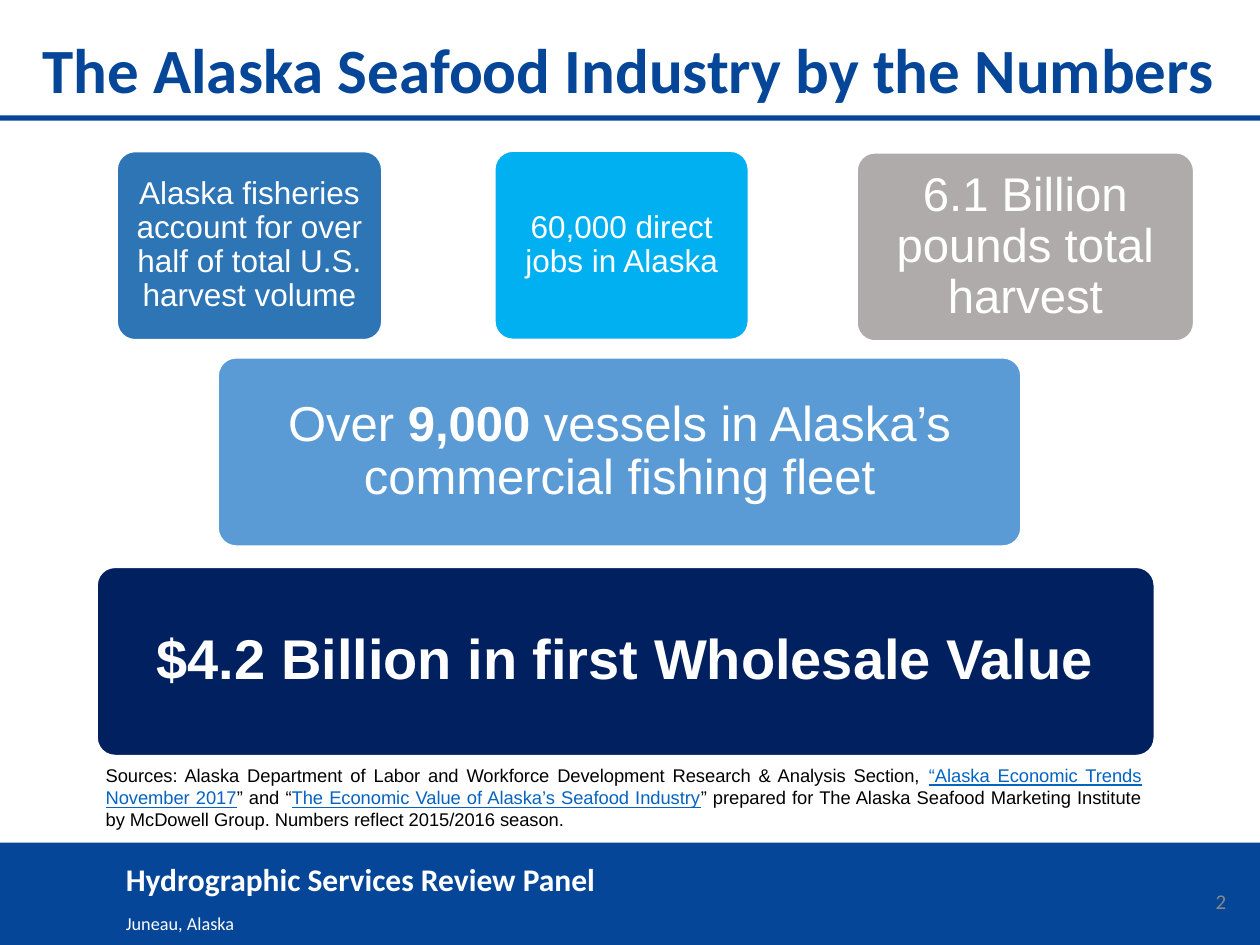
import pptx
import pptx.util
import pptx.dml.color
import pptx.enum.shapes
import pptx.enum.text
from lxml import etree

Pt = pptx.util.Pt
ALIGN = pptx.enum.text.PP_ALIGN
ANCHOR = pptx.enum.text.MSO_ANCHOR
SHAPE = pptx.enum.shapes.MSO_SHAPE
A = "{http://schemas.openxmlformats.org/drawingml/2006/main}"

NAVY, WHITE, BLACK, LINK = "054698", "FFFFFF", "000000", "0563C1"


def rgb(value):
    return pptx.dml.color.RGBColor.from_string(value)


class Deck:
    """Holds the style and the current slide."""

    def __init__(self, width, height):
        self.prs = pptx.Presentation()
        self.prs.slide_width, self.prs.slide_height = Pt(width), Pt(height)
        self.s = None

    def slide(self):
        self.s = self.prs.slides.add_slide(self.prs.slide_layouts[6])

    def shape(self, kind, at, fill, line=None, alpha=None):
        sp = self.s.shapes.add_shape(kind, *[Pt(v) for v in at])
        sp.shadow.inherit = False
        sp.fill.solid()
        sp.fill.fore_color.rgb = rgb(fill)
        if alpha is not None:
            clr = sp.fill._xPr.find(f"{A}solidFill/{A}srgbClr")
            etree.SubElement(clr, A + "alpha").set("val", str(alpha * 1000))
        if line:
            sp.line.color.rgb, sp.line.width = rgb(line), Pt(2)
        else:
            sp.line.fill.background()
        return sp

    def frame(self, sp, anchor, ins=(7.2, 3.6)):
        tf = sp.text_frame
        x, y = Pt(ins[0]), Pt(ins[1])
        style = dict(word_wrap=True, vertical_anchor=anchor, margin_left=x,
                     margin_right=x, margin_top=y, margin_bottom=y)
        for name, value in style.items():
            setattr(tf, name, value)
        return tf

    def paragraph(self, p, runs, font, **layout):
        """Each run is (text, changes to the paragraph's font)."""
        for name, value in layout.items():
            setattr(p, name, value)
        for text, change in runs:
            r = p.add_run()
            r.text = text
            for name, value in {**font, **change}.items():
                if name == "color":
                    r.font.color.rgb = rgb(value)
                elif name == "baseline":
                    r._r.get_or_add_rPr().set("baseline", str(value * 1000))
                else:
                    setattr(r.font, name, value)

    def text(self, at, runs, font, anchor=ANCHOR.TOP, **layout):
        sp = self.s.shapes.add_textbox(*[Pt(v) for v in at])
        tf = self.frame(sp, anchor)
        self.paragraph(tf.paragraphs[0], runs, font, **layout)
        return tf

    def card(self, left, top, width, fill, size, inset, runs):
        sp = self.shape(SHAPE.ROUNDED_RECTANGLE, (left, top, width, 108.72), fill, WHITE)
        sp.adjustments[0] = 0.1
        tf = self.frame(sp, ANCHOR.MIDDLE, (inset, inset))
        font = dict(name="Arial", size=Pt(size), color=WHITE, bold=False)
        self.paragraph(tf.paragraphs[0], runs, font,
                       alignment=ALIGN.CENTER, line_spacing=0.9)


def main():
    deck = Deck(720, 540)
    deck.slide()

    # Header and footer bands
    deck.shape(SHAPE.RECTANGLE, (0, 481.5, 720, 58.5), NAVY)
    deck.shape(SHAPE.RECTANGLE, (-0.7, 0, 722, 65.5), WHITE, alpha=71)
    deck.shape(SHAPE.RECTANGLE, (0, 66, 721.4, 3), NAVY)

    # Footer text and page number
    footer = dict(name="Calibri", size=Pt(18), color=WHITE)
    tf = deck.text((64.8, 492.5, 331, 42),
                   [("Hydrographic Services Review Panel", dict(bold=True))],
                   footer, line_spacing=0.78)
    deck.paragraph(tf.add_paragraph(), [("Juneau, Alaska", dict(baseline=30))],
                   footer, space_before=Pt(6))
    deck.text((545.8, 500.4, 162, 28.8), [("2", {})],
              dict(name="Calibri", size=Pt(12), color="888888"),
              ANCHOR.MIDDLE, alignment=ALIGN.RIGHT)

    # Title
    deck.text((17.3, 18, 702.7, 48),
              [("The Alaska Seafood Industry by the Numbers", {})],
              dict(name="Calibri", size=Pt(36), color=NAVY, bold=True),
              ANCHOR.MIDDLE, line_spacing=0.9)

    # Pyramid of figures: left, top, width, fill, text size, inset, runs
    bold = dict(bold=True)
    cards = [
        (54.9, 323.6, 605.3, "002060", 32, 9.4,
         [("$4.2 Billion in first Wholesale Value", bold)]),
        (124.1, 203.9, 459.9, "5B9BD5", 28, 8.6,
         [("Over ", {}), ("9,000", bold),
          (" vessels in Alaska’s commercial fishing fleet", {})]),
        (66.4, 86, 152.4, "2E75B6", 18, 5,
         [("Alaska fisheries account for over half of total U.S. harvest volume", {})]),
        (282.2, 85.8, 146, "00B0F0", 18, 5, [("60,000 direct jobs in Alaska", {})]),
        (489.2, 86.7, 193.5, "AFABAB", 27, 8, [("6.1 Billion pounds total harvest", {})]),
    ]
    for card in cards:
        deck.card(*card)

    # Sources
    cited = dict(color=LINK, underline=True)
    deck.text((53.3, 433.4, 606.2, 45.4), [
        ("Sources: Alaska Department of Labor and Workforce Development "
         "Research & Analysis Section, ", {}),
        ("“Alaska Economic Trends November 2017", cited),
        ("” and “", {}),
        ("The Economic Value of Alaska’s Seafood Industry", cited),
        ("” prepared for The Alaska Seafood Marketing Institute by McDowell Group. "
         "Numbers reflect 2015/2016 season.", {}),
    ], dict(name="Arial", size=Pt(10.5), color=BLACK), alignment=ALIGN.JUSTIFY)

    deck.prs.save("out.pptx")


if __name__ == "__main__":
    main()
